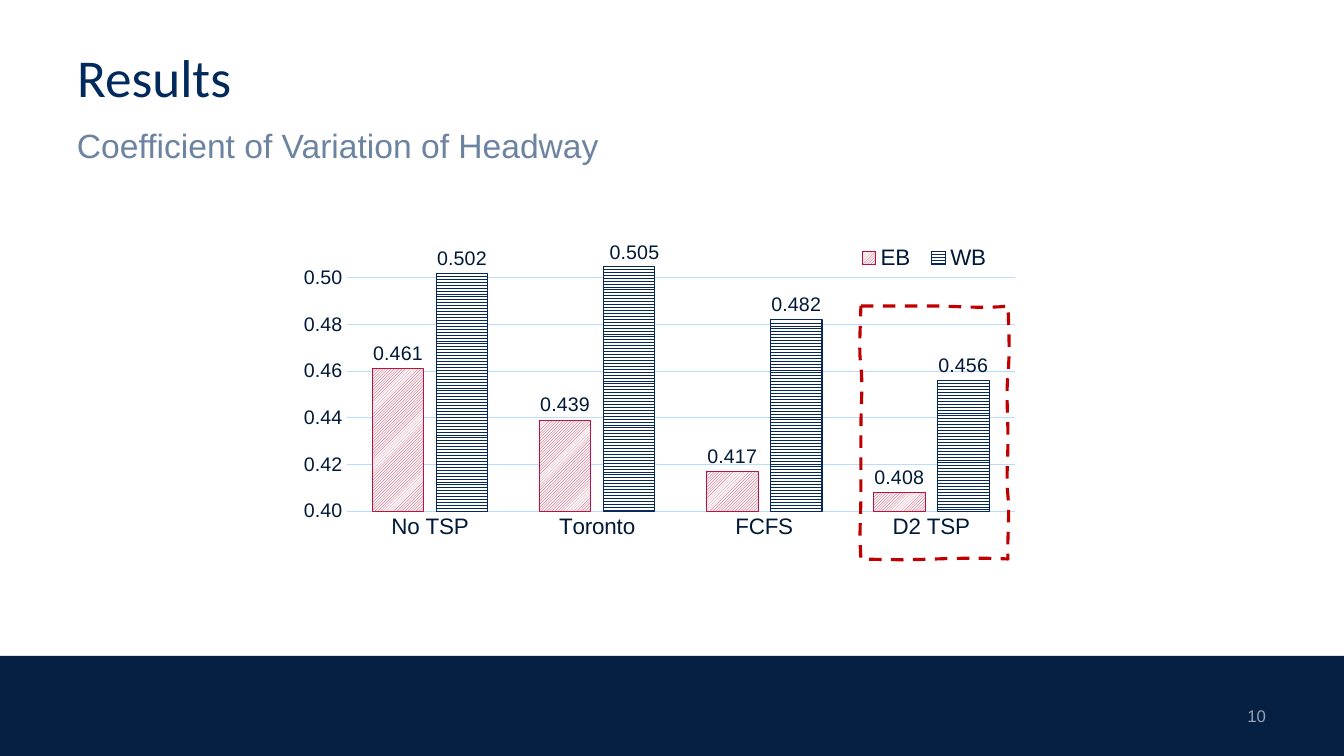
"""Build the results slide with the headway variation chart."""
from lxml import etree
from pptx import Presentation
from pptx.chart.data import CategoryChartData
from pptx.dml.color import RGBColor
from pptx.enum.chart import XL_CHART_TYPE, XL_LABEL_POSITION, XL_LEGEND_POSITION, XL_TICK_MARK
from pptx.enum.dml import MSO_LINE, MSO_PATTERN
from pptx.enum.shapes import MSO_SHAPE
from pptx.enum.text import MSO_ANCHOR, PP_ALIGN
from pptx.oxml.ns import qn
from pptx.util import Pt

CLUSTERED = XL_CHART_TYPE.COLUMN_CLUSTERED
OUTSIDE_END = XL_LABEL_POSITION.OUTSIDE_END
LEGEND_BOTTOM = XL_LEGEND_POSITION.BOTTOM
NO_TICK = XL_TICK_MARK.NONE
DASH = MSO_LINE.DASH
DIAGONAL = MSO_PATTERN.LIGHT_UPWARD_DIAGONAL
ZIG_ZAG = MSO_PATTERN.ZIG_ZAG
RECTANGLE = MSO_SHAPE.RECTANGLE
TOP, MIDDLE = MSO_ANCHOR.TOP, MSO_ANCHOR.MIDDLE
LEFT, RIGHT = PP_ALIGN.LEFT, PP_ALIGN.RIGHT

WHITE = RGBColor(0xFF, 0xFF, 0xFF)
FOOTER_NAVY = RGBColor(0x05, 0x20, 0x43)
TITLE_BLUE = RGBColor(0x00, 0x2A, 0x5C)
SUBTITLE_BLUE = RGBColor(0x6C, 0x84, 0xA1)
NUMBER_GREY = RGBColor(0x96, 0xA1, 0xB3)
CHART_BLUE = RGBColor(0x4C, 0x69, 0x8D)
LABEL_NAVY = RGBColor(0x00, 0x19, 0x37)
GRID_BLUE = RGBColor(0xBB, 0xDA, 0xFF)
EAST_RED = RGBColor(0xBB, 0x13, 0x3E)
WEST_NAVY = RGBColor(0x06, 0x29, 0x58)
HIGHLIGHT_RED = RGBColor(0xC0, 0x00, 0x00)

PX = 914400 / 100.8


def px(*lengths):
    """Turn pixel lengths into EMU."""
    return [round(length * PX) for length in lengths]


def place(parent, index, **fields):
    """Give a chart part a manual layout."""
    for old_layout in parent.findall(qn("c:layout")):
        parent.remove(old_layout)
    layout = etree.Element(qn("c:layout"))
    manual = etree.SubElement(layout, qn("c:manualLayout"))
    for name, value in fields.items():
        etree.SubElement(manual, qn(f"c:{name}")).set("val", str(value))
    parent.insert(index, layout)


presentation = Presentation()
presentation.slide_width, presentation.slide_height = px(1344, 756)
slide = presentation.slides.add_slide(presentation.slide_layouts[5])
shapes = slide.shapes

footer = shapes.add_shape(RECTANGLE, *px(0, 656, 1344, 100))
footer.shadow.inherit = False
footer.fill.solid()
footer.fill.fore_color.rgb = FOOTER_NAVY
footer.line.fill.background()

title = shapes.title
title.left, title.top, title.width, title.height = px(67, 31, 1210, 90)
subtitle = shapes.add_textbox(*px(67, 120, 672, 50))
number = shapes.add_textbox(*px(1174, 696, 102, 40))
texts = [
    (title, "Results", MIDDLE, LEFT, {"name": "Calibri", "size": Pt(38)}, TITLE_BLUE),
    (subtitle, "Coefficient of Variation of Headway", TOP, LEFT,
     {"name": "Arial", "size": Pt(24)}, SUBTITLE_BLUE),
    (number, "10", MIDDLE, RIGHT, {"name": "Arial", "size": Pt(12)}, NUMBER_GREY),
]
for shape, text, anchor, alignment, font_format, color in texts:
    frame = shape.text_frame
    frame.word_wrap = True
    frame.vertical_anchor = anchor
    paragraph = frame.paragraphs[0]
    paragraph.text = text
    paragraph.alignment = alignment
    for name, value in font_format.items():
        setattr(paragraph.font, name, value)
    paragraph.font.color.rgb = color

data = CategoryChartData(number_format="0.000")
data.categories = ["No TSP", "Toronto", "FCFS", "D2 TSP"]
data.add_series("EB", [0.461, 0.439, 0.417, 0.408])
data.add_series("WB", [0.502, 0.505, 0.482, 0.456])
chart = shapes.add_chart(CLUSTERED, *px(268, 223, 763, 368), data).chart
chart.has_title = False
chart.has_legend = True
legend = chart.legend
legend.position = LEGEND_BOTTOM
legend.include_in_layout = False
plot = chart.plots[0]
plot.gap_width, plot.overlap = 100, -24
plot.vary_by_categories = False

category_axis, value_axis = chart.category_axis, chart.value_axis
for axis in (category_axis, value_axis):
    axis.major_tick_mark = axis.minor_tick_mark = NO_TICK
value_axis.minimum_scale, value_axis.maximum_scale = 0.4, 0.51
value_axis.major_unit = 0.02
value_axis.has_major_gridlines = True
value_axis.tick_labels.number_format = "0.00"
value_axis.tick_labels.number_format_is_linked = False
value_axis.format.line.fill.background()
for line in (category_axis.format.line, value_axis.major_gridlines.format.line):
    line.color.rgb = GRID_BLUE
    line.width = Pt(0.75)

fonts = [
    (chart.font, 10, CHART_BLUE),
    (legend.font, 16, LABEL_NAVY),
    (category_axis.tick_labels.font, 16, LABEL_NAVY),
    (value_axis.tick_labels.font, 14, LABEL_NAVY),
]
for series, pattern, color in zip(plot.series, (DIAGONAL, ZIG_ZAG), (EAST_RED, WEST_NAVY)):
    fill, line = series.format.fill, series.format.line
    fill.patterned()
    fill.pattern = pattern
    fill.fore_color.rgb = color
    fill.back_color.rgb = WHITE
    line.color.rgb = color
    line.width = Pt(0.75)
    labels = series.data_labels
    labels.show_value = True
    labels.position = OUTSIDE_END
    labels.number_format = "0.000"
    labels.number_format_is_linked = False
    fonts.append((labels.font, 14, LABEL_NAVY))

toronto_label = plot.series[1].points[1].data_label
toronto_label.position = OUTSIDE_END
fonts.append((toronto_label.font, 14, LABEL_NAVY))
for font, size, color in fonts:
    font.name = "Arial"
    font.size = Pt(size)
    font.color.rgb = color

chart_space = chart.element
place(chart_space.find(".//" + qn("c:plotArea")), 0, layoutTarget="inner",
      xMode="edge", yMode="edge", x=0.103, y=0.086, w=0.876, h=0.697)
place(chart_space.find(".//" + qn("c:legend")), 1,
      xMode="edge", yMode="edge", x=0.76, y=0.05, w=0.2, h=0.09)
place(chart_space.find(".//" + qn("c:dLbl")), 1, x=0.007, y=0.005)

outline_start = (861, 306)
outline_curves = [
    ((895, 306), (913, 306), (933, 306)),
    ((953, 306), (987, 309), (1008, 306)),
    ((1009, 329), (1010, 353), (1008, 375)),
    ((1006, 396), (1008, 411), (1008, 438)),
    ((1008, 465), (1006, 477), (1008, 496)),
    ((1010, 516), (1007, 542), (1008, 559)),
    ((986, 558), (966, 558), (936, 559)),
    ((906, 560), (894, 560), (861, 559)),
    ((859, 529), (861, 522), (861, 491)),
    ((861, 460), (861, 448), (861, 428)),
    ((861, 408), (863, 383), (861, 367)),
    ((859, 351), (860, 336), (861, 306)),
]
STEPS = 8
vertices = []
start = outline_start
for first, second, end in outline_curves:
    for step in range(1, STEPS + 1):
        t = step / STEPS
        weights = ((1 - t) ** 3, 3 * t * (1 - t) ** 2, 3 * t * t * (1 - t), t ** 3)
        corners = (start, first, second, end)
        vertices.append(px(*(sum(weight * corner[axis] for weight, corner in zip(weights, corners))
                             for axis in (0, 1))))
    start = end
builder = shapes.build_freeform(*px(*outline_start))
builder.add_line_segments(vertices, close=True)
highlight = builder.convert_to_shape()
highlight.shadow.inherit = False
highlight.fill.background()
highlight.line.color.rgb = HIGHLIGHT_RED
highlight.line.width = Pt(2.25)
highlight.line.dash_style = DASH

presentation.save("out.pptx")
